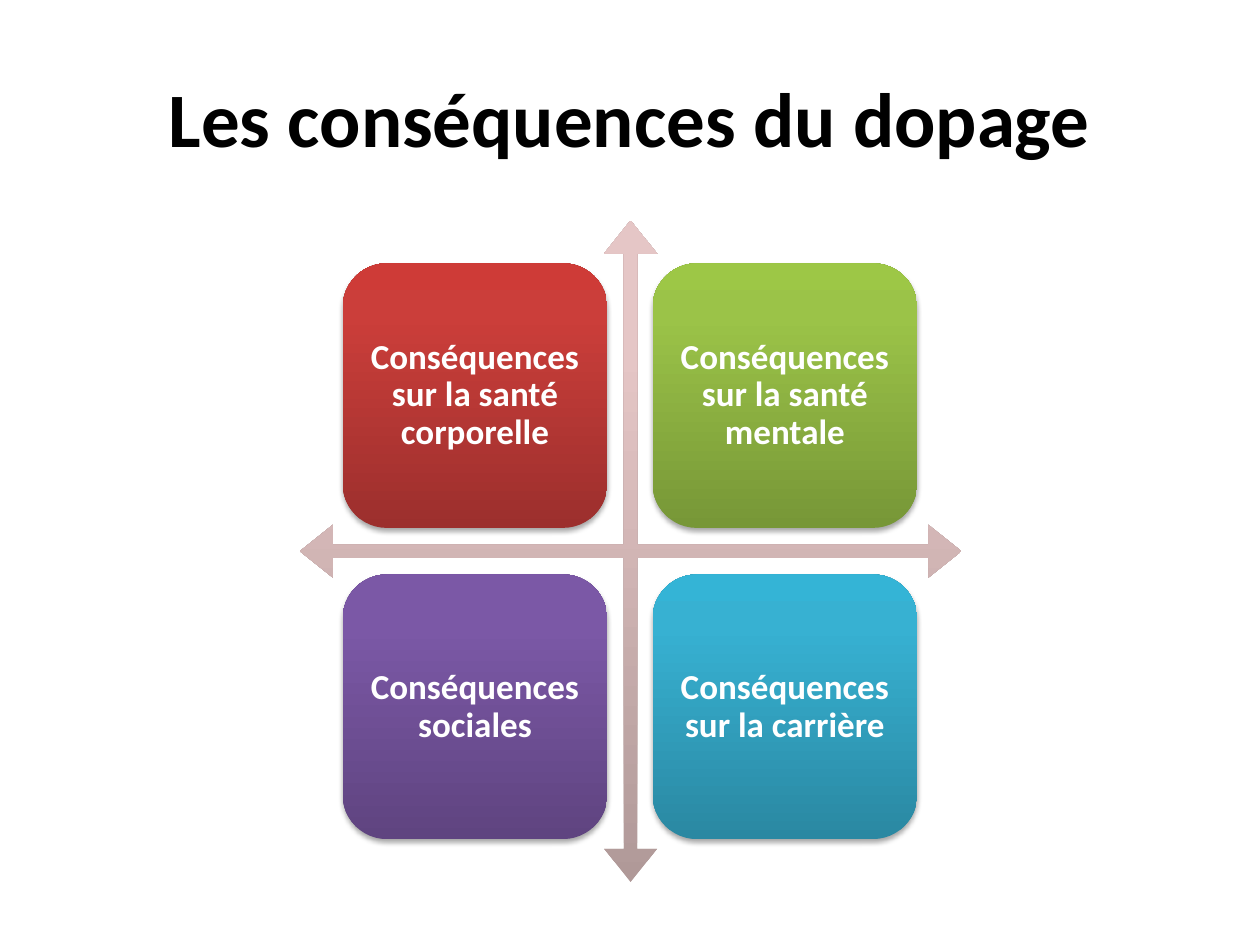
from copy import deepcopy
from lxml import etree
from pptx import Presentation
from pptx.dml.color import RGBColor
from pptx.enum import shapes, text
from pptx.oxml.ns import qn
from pptx.util import Inches, Pt

BLACK = RGBColor(0x00, 0x00, 0x00)
WHITE = RGBColor(0xFF, 0xFF, 0xFF)
ROSE = [RGBColor(0xB0, 0x99, 0x98), RGBColor(0xE5, 0xC6, 0xC6), RGBColor(0xE6, 0xC7, 0xC6)]
RED = [RGBColor(0x9C, 0x2F, 0x2D), RGBColor(0xCB, 0x3E, 0x3A), RGBColor(0xCE, 0x3B, 0x37)]
GREEN = [RGBColor(0x77, 0x97, 0x37), RGBColor(0x9B, 0xC3, 0x48), RGBColor(0x9D, 0xC7, 0x46)]
PURPLE = [RGBColor(0x5F, 0x44, 0x80), RGBColor(0x7B, 0x58, 0xA6), RGBColor(0x7C, 0x57, 0xA8)]
BLUE = [RGBColor(0x2A, 0x88, 0xA2), RGBColor(0x37, 0xB1, 0xD2), RGBColor(0x34, 0xB4, 0xD6)]


def add_gradient_shape(kind, left, top, size, colors):
    shape = slide.shapes.add_shape(kind, Inches(left), Inches(top), Inches(size), Inches(size))
    shape.fill.gradient()
    shape.fill.gradient_angle = 90
    stop_list = shape._element.spPr.find(".//" + qn("a:gsLst"))
    stop_list.append(deepcopy(stop_list[-1]))
    for stop, position, color in zip(shape.fill.gradient_stops, (0, 0.8, 1), colors):
        stop.position = position
        stop.color.rgb = color
    shape.line.fill.background()
    shape.shadow.inherit = False
    return shape


def write_text(shape, words, size, color):
    frame = shape.text_frame
    frame.text = words
    frame.word_wrap = True
    frame.vertical_anchor = text.MSO_ANCHOR.MIDDLE
    paragraph = frame.paragraphs[0]
    paragraph.alignment = text.PP_ALIGN.CENTER
    font = paragraph.runs[0].font
    font.name = "Calibri"
    font.size = Pt(size)
    font.bold = True
    font.color.rgb = color
    return frame


presentation = Presentation()
presentation.slide_width = Inches(10)
presentation.slide_height = Inches(7.5)
slide = presentation.slides.add_slide(presentation.slide_layouts[6])

title = slide.shapes.add_textbox(Inches(0.5), Inches(0.3), Inches(9), Inches(1.25))
write_text(title, "Les conséquences du dopage", 44, BLACK)

arrows = add_gradient_shape(shapes.MSO_SHAPE.QUAD_ARROW, 2.38, 1.75, 5.25, ROSE)
for index, value in enumerate((0.02, 0.04, 0.05)):
    arrows.adjustments[index] = value

consequences = [
    ("Conséquences sur la santé corporelle", RED),
    ("Conséquences sur la santé mentale", GREEN),
    ("Conséquences sociales", PURPLE),
    ("Conséquences sur la carrière", BLUE),
]
for index, (words, colors) in enumerate(consequences):
    row, column = divmod(index, 2)
    card = add_gradient_shape(
        shapes.MSO_SHAPE.ROUNDED_RECTANGLE, 2.72 + 2.46 * column, 2.09 + 2.47 * row, 2.1, colors
    )
    effects = card._element.spPr.find(qn("a:effectLst"))
    shadow = etree.SubElement(
        effects, qn("a:outerShdw"), blurRad=str(Pt(3.1)), dist=str(Pt(1.8)), dir="5400000", rotWithShape="0"
    )
    shadow_color = etree.SubElement(shadow, qn("a:srgbClr"), val=str(BLACK))
    etree.SubElement(shadow_color, qn("a:alpha"), val="35000")
    frame = write_text(card, words, 20, WHITE)
    frame.margin_left = frame.margin_right = Inches(0.08)
    frame.margin_top = frame.margin_bottom = Inches(0.08)
    frame.paragraphs[0].line_spacing = 0.9

presentation.save("out.pptx")
